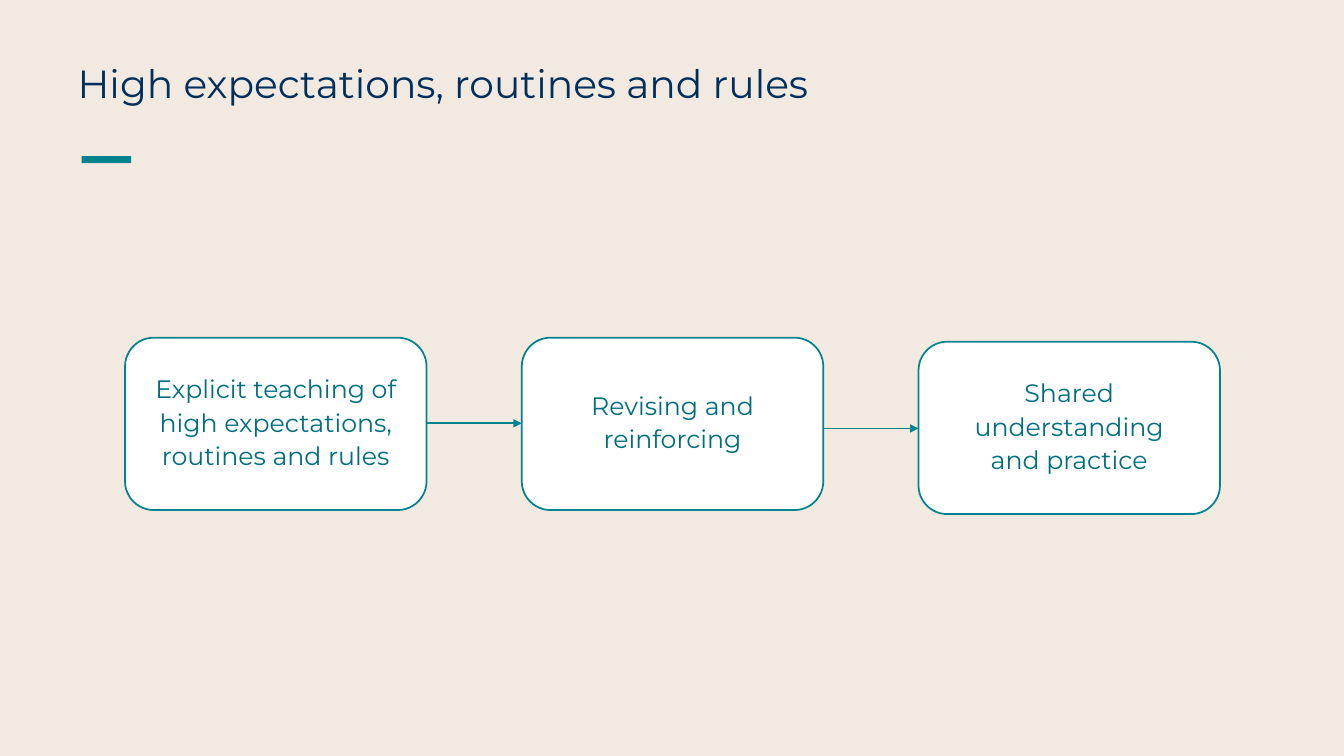
from lxml import etree
from pptx import Presentation
from pptx.dml.color import RGBColor
from pptx.enum.shapes import MSO_CONNECTOR, MSO_SHAPE
from pptx.enum.text import MSO_ANCHOR, MSO_AUTO_SIZE, PP_ALIGN
from pptx.oxml.ns import qn
from pptx.util import Inches, Pt

SAND = RGBColor(0xF2, 0xEA, 0xE0)
NAVY = RGBColor(0x00, 0x2F, 0x5E)
TEAL = RGBColor(0x00, 0x83, 0x8E)
DARK_TEAL = RGBColor(0x00, 0x6E, 0x7F)
WHITE = RGBColor(0xFF, 0xFF, 0xFF)

RECTANGLE, ROUNDED = MSO_SHAPE.RECTANGLE, MSO_SHAPE.ROUNDED_RECTANGLE
STRAIGHT = MSO_CONNECTOR.STRAIGHT
MIDDLE, NO_AUTOFIT = MSO_ANCHOR.MIDDLE, MSO_AUTO_SIZE.NONE
LEFT, CENTER = PP_ALIGN.LEFT, PP_ALIGN.CENTER

FONT = "Montserrat"
LINE_WIDTH = Pt(1.25)
STEP_WIDTH, STEP_HEIGHT = 2.99, 1.71
STEP_PITCH = 3.935
# Label, drop below the row's top edge
STEPS = [
    ("Explicit teaching of high expectations, routines and rules", 0),
    ("Revising and reinforcing", 0),
    ("Shared understanding\vand practice", 0.04),
]
# Height of each arrow below the row's top edge
ARROW_DROPS = [0.85, 0.9]


def set_all(target, formats):
    for name, value in formats.items():
        setattr(target, name, value)


def format_text(frame, size, color, alignment, spacing):
    set_all(frame, {"word_wrap": True, "auto_size": NO_AUTOFIT,
                    "vertical_anchor": MIDDLE})
    para = frame.paragraphs[0]
    set_all(para, {"alignment": alignment, "line_spacing": spacing})
    for span in para.runs:
        set_all(span.font, {"name": FONT, "size": Pt(size)})
        span.font.color.rgb = color


def add_heading(page, left, top, width, height):
    title = page.shapes.title
    set_all(title, {"left": Inches(left), "top": Inches(top),
                    "width": Inches(width), "height": Inches(height)})
    title.text_frame.text = "High expectations, routines and rules"
    format_text(title.text_frame, 28, NAVY, LEFT, 0.9)

    accent = page.shapes.add_shape(
        RECTANGLE, Inches(left + 0.14), Inches(top + 1.11),
        Inches(0.49), Inches(0.07))
    accent.shadow.inherit = False
    accent.fill.solid()
    accent.fill.fore_color.rgb = TEAL
    accent.line.fill.background()


def add_step(page, left, top, label):
    box = page.shapes.add_shape(
        ROUNDED, Inches(left), Inches(top),
        Inches(STEP_WIDTH), Inches(STEP_HEIGHT))
    box.shadow.inherit = False
    box.fill.solid()
    box.fill.fore_color.rgb = WHITE
    box.line.color.rgb = TEAL
    box.line.width = LINE_WIDTH
    frame = box.text_frame
    frame.text = label
    set_all(frame, {"margin_left": Inches(0.1), "margin_right": Inches(0.1),
                    "margin_top": Inches(0.05), "margin_bottom": Inches(0.12)})
    format_text(frame, 18, DARK_TEAL, CENTER, Pt(24))


def add_arrow(page, start, end, height):
    arrow = page.shapes.add_connector(
        STRAIGHT, Inches(start), Inches(height), Inches(end), Inches(height))
    arrow.line.color.rgb = TEAL
    arrow.line.width = LINE_WIDTH
    etree.SubElement(arrow.line._get_or_add_ln(), qn("a:tailEnd"), type="triangle")
    etree.SubElement(arrow._element.spPr, qn("a:effectLst"))


def add_process(page, left, top):
    """Place the steps in a row, with an arrow in each gap."""
    for index, (label, drop) in enumerate(STEPS):
        add_step(page, left + index * STEP_PITCH, top + drop, label)
    for index, drop in enumerate(ARROW_DROPS):
        step_left = left + index * STEP_PITCH
        add_arrow(page, step_left + STEP_WIDTH, step_left + STEP_PITCH, top + drop)


def main():
    deck = Presentation()
    set_all(deck, {"slide_width": Inches(13.33), "slide_height": Inches(7.5)})
    page = deck.slides.add_slide(deck.slide_layouts[5])
    page.background.fill.solid()
    page.background.fill.fore_color.rgb = SAND
    add_heading(page, 0.67, 0.44, 11.94, 0.83)
    add_process(page, 1.24, 3.35)
    deck.save("out.pptx")


if __name__ == "__main__":
    main()
